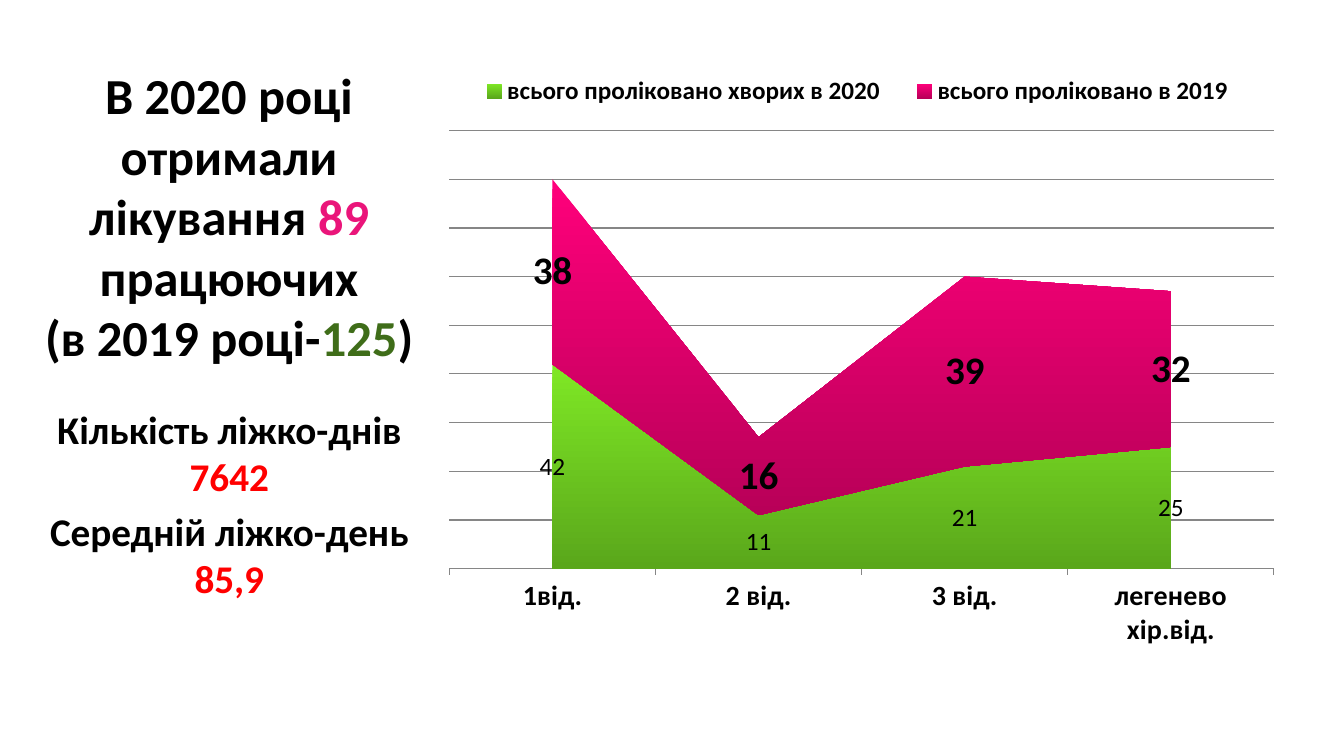
from dataclasses import dataclass

from lxml.etree import SubElement
from pptx import Presentation
from pptx.chart.chart import Chart
from pptx.chart.data import CategoryChartData
from pptx.dml.color import RGBColor
from pptx.enum.chart import XL_CHART_TYPE, XL_LEGEND_POSITION, XL_TICK_MARK
from pptx.enum.text import MSO_ANCHOR, PP_ALIGN
from pptx.oxml.ns import qn
from pptx.slide import Slide
from pptx.text.text import Font
from pptx.util import Cm, Pt


@dataclass(frozen=True)
class Theme:
    """Colours and type sizes of the slide."""
    font: str = "Calibri"
    ink: str = "000000"
    pink: str = "EA157A"
    green: str = "3F6D19"
    red: str = "FF0000"
    grid: str = "868686"
    title: int = 36
    body: int = 28
    axis: int = 20
    chart: int = 18


@dataclass(frozen=True)
class Box:
    """A place on the slide in centimetres."""
    left: float
    top: float
    width: float
    height: float

    def lengths(self) -> tuple[Cm, ...]:
        """Return left, top, width and height as lengths."""
        return Cm(self.left), Cm(self.top), Cm(self.width), Cm(self.height)


@dataclass(frozen=True)
class Piece:
    """A stretch of text in one colour."""
    words: str
    color: str = Theme.ink


@dataclass(frozen=True)
class YearSeries:
    """Patients treated in one year, by department."""
    name: str
    patients: tuple[int, ...]
    top_color: str
    bottom_color: str
    label_size: int
    label_bold: bool


THEME = Theme()
HEADLINE = [[
    Piece("В 2020 році отримали лікування "),
    Piece("89 ", THEME.pink),
    Piece("працюючих\n(в 2019 році-"),
    Piece("125", THEME.green),
    Piece(")"),
]]
BED_DAYS = [
    [Piece("Кількість ліжко-днів "), Piece("7642", THEME.red)],
    [Piece("Середній ліжко-день "), Piece("85,9", THEME.red)],
]
DEPARTMENTS = ("1від.", "2 від.", "3 від.", "легенево хір.від.")
YEARS = (
    YearSeries("всього проліковано хворих в 2020", (42, 11, 21, 25),
               "7FE825", "5AA71B", THEME.chart, False),
    YearSeries("всього проліковано в 2019", (38, 16, 39, 32),
               "FF007B", "B80058", THEME.body, True),
)


def style_font(font: Font, size: int, color: str = THEME.ink, bold: bool = True) -> None:
    """Apply the theme typeface with a size, colour and weight."""
    font.name = THEME.font
    font.size = Pt(size)
    font.bold = bold
    font.color.rgb = RGBColor.from_string(color)


def add_text(slide: Slide, box: Box, paragraphs: list[list[Piece]], *, size: int,
             anchor: MSO_ANCHOR, space_before: float = 0) -> None:
    """Add a centred text box made of coloured pieces."""
    frame = slide.shapes.add_textbox(*box.lengths()).text_frame
    frame.word_wrap = True
    frame.vertical_anchor = anchor
    for index, pieces in enumerate(paragraphs):
        paragraph = frame.add_paragraph() if index else frame.paragraphs[0]
        paragraph.alignment = PP_ALIGN.CENTER
        paragraph.space_before = Pt(space_before)
        for piece in pieces:
            for row, line in enumerate(piece.words.split("\n")):
                if row:
                    paragraph.add_line_break()
                run = paragraph.add_run()
                run.text = line
                style_font(run.font, size, piece.color)


def set_layout(chart: Chart, parent: str, index: int, inner: bool,
               shares: tuple[float, ...]) -> None:
    """Place a chart part by its shares of the chart area."""
    part = chart.element.xpath(f".//{parent}")[0]
    for old in part.findall(qn("c:layout")):
        part.remove(old)
    layout = SubElement(part, qn("c:layout"))
    part.insert(index, layout)
    manual = SubElement(layout, qn("c:manualLayout"))
    settings = [("layoutTarget", "inner")] if inner else []
    settings += [("xMode", "edge"), ("yMode", "edge")]
    settings += zip("xywh", shares)
    for tag, value in settings:
        SubElement(manual, qn(f"c:{tag}")).set("val", str(value))


def style_axes(chart: Chart) -> None:
    """Format the department axis and the hidden value axis."""
    departments, patients = chart.category_axis, chart.value_axis
    style_font(departments.tick_labels.font, THEME.axis)
    departments.major_tick_mark = XL_TICK_MARK.OUTSIDE
    patients.visible = False
    patients.minimum_scale, patients.maximum_scale = 0, 90
    patients.major_unit = 10
    patients.has_major_gridlines = True
    for line in (departments.format.line, patients.major_gridlines.format.line):
        line.color.rgb = RGBColor.from_string(THEME.grid)
        line.width = Pt(0.75)
    for crossing in chart.element.xpath(".//c:valAx/c:crossBetween"):
        crossing.set("val", "between")


def add_patients_chart(slide: Slide, box: Box) -> None:
    """Add the stacked areas of patients by department."""
    data = CategoryChartData()
    data.categories = DEPARTMENTS
    for year in YEARS:
        data.add_series(year.name, year.patients)
    chart = slide.shapes.add_chart(XL_CHART_TYPE.AREA_STACKED, *box.lengths(), data).chart
    chart.has_title = False
    style_font(chart.font, THEME.chart, bold=False)
    style_axes(chart)
    for series, year in zip(chart.plots[0].series, YEARS):
        fill = series.format.fill
        fill.gradient()
        fill.gradient_angle = 270
        for stop, color in zip(fill.gradient_stops, (year.top_color, year.bottom_color)):
            stop.color.rgb = RGBColor.from_string(color)
        series.format.line.fill.background()
        series.data_labels.show_value = True
        style_font(series.data_labels.font, year.label_size, bold=year.label_bold)
    chart.has_legend = True
    chart.legend.position = XL_LEGEND_POSITION.TOP
    chart.legend.include_in_layout = False
    style_font(chart.legend.font, THEME.chart)
    set_layout(chart, "c:legend", 1, False, (0.04, 0.06, 0.92, 0.07))
    set_layout(chart, "c:plotArea", 0, True, (0.03, 0.16, 0.95, 0.72))


def main() -> None:
    """Build and save the slide."""
    deck = Presentation()
    deck.slide_width, deck.slide_height = Cm(33.87), Cm(19.05)
    slide = deck.slides.add_slide(deck.slide_layouts[6])
    add_text(slide, Box(0.86, 1.14, 9.83, 8.23), HEADLINE,
             size=THEME.title, anchor=MSO_ANCHOR.BOTTOM)
    add_text(slide, Box(0.56, 10.08, 10.44, 5.69), BED_DAYS,
             size=THEME.body, anchor=MSO_ANCHOR.TOP, space_before=THEME.body * 0.2)
    add_patients_chart(slide, Box(10.67, 0.84, 21.87, 15.47))
    deck.save("out.pptx")


if __name__ == "__main__":
    main()
